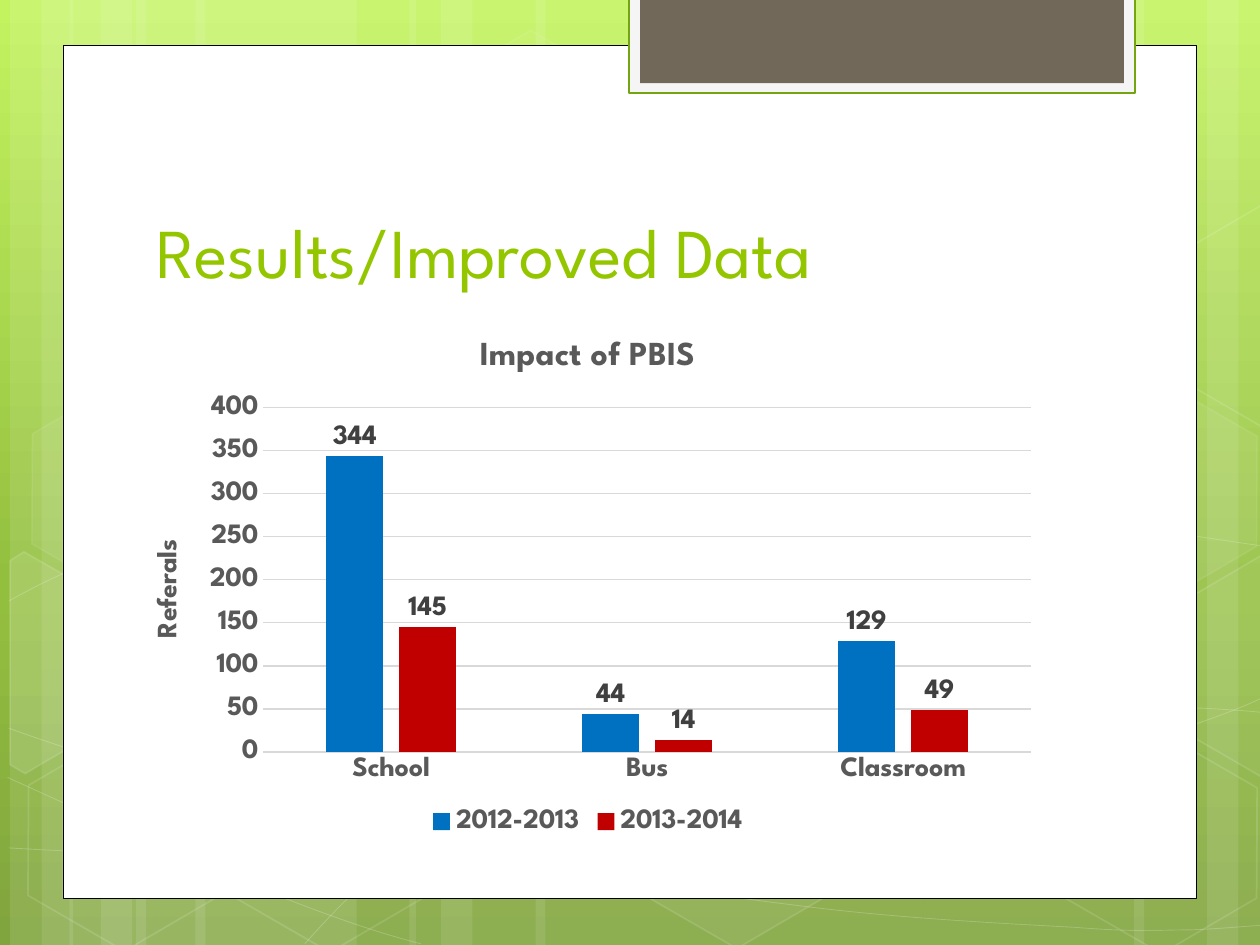
"""Build the slide that charts referrals before and after PBIS."""
from copy import deepcopy
from dataclasses import dataclass
from typing import NamedTuple, Optional

from lxml.etree import SubElement
from pptx import Presentation
from pptx.chart.data import CategoryChartData
from pptx.dml.color import RGBColor
from pptx.enum.chart import XL_CHART_TYPE as ChartType
from pptx.enum.chart import XL_LABEL_POSITION as LabelPosition
from pptx.enum.chart import XL_LEGEND_POSITION as LegendPosition
from pptx.enum.chart import XL_TICK_MARK as TickMark
from pptx.enum.shapes import MSO_SHAPE as Preset
from pptx.enum.text import MSO_ANCHOR as Anchor
from pptx.enum.text import PP_ALIGN as Align
from pptx.oxml.ns import qn
from pptx.slide import Slide
from pptx.util import Pt

PX = 9144
Point = tuple[int, int]


@dataclass(frozen=True)
class Theme:
    font: str = "League Spartan"
    white: str = "FFFFFF"
    black: str = "000000"
    tab_edge: str = "74A510"
    tab_rim: str = "F5F5F5"
    tab: str = "71685A"
    title: str = "94C600"
    axis: str = "595959"
    label: str = "404040"
    grid: str = "D9D9D9"
    sky: tuple = ((0, "C3F35F"), (0.62, "93BF3F"), (1, "81A53E"))
    title_size: float = 40
    chart_title_size: float = 19.2
    chart_size: float = 16


class Paint(NamedTuple):
    color: str
    opacity: int = 100
    width: float = 0


class Box(NamedTuple):
    left: int
    top: int
    width: int
    height: int

    def emu(self) -> list[int]:
        return [side * PX for side in self]


class Hexagon(NamedTuple):
    left: int
    top: int
    fill: int
    line: int


class Shard(NamedTuple):
    points: list[Point]
    fill: int


class Year(NamedTuple):
    name: str
    referrals: tuple[int, ...]
    color: str


THEME = Theme()
BANDS = [(108, 175), (8, 50), (33, 83), (155, 175), (55, 50), (80, 83),
         (733, 175), (958, 50), (900, 83), (425, 308), (325, 50), (350, 83)]
CURVES = [
    [(7, 673), (61, 676), (115, 679), (190, 678), (265, 677), (358, 675), (458, 665),
     (558, 655), (700, 636), (792, 617), (883, 598), (977, 568), (1007, 551)],
    [(7, 477), (36, 461), (65, 446), (121, 431), (178, 416), (259, 394), (347, 387),
     (436, 380), (544, 379), (654, 387), (764, 395), (947, 426), (1007, 434)],
    [(6, 617), (127, 672), (247, 727), (334, 749)],
    [(7, 578), (38, 589), (70, 600), (128, 616), (186, 631), (273, 656), (357, 673),
     (440, 690), (545, 708), (628, 718), (711, 729), (800, 733), (853, 736),
     (905, 740), (919, 738), (945, 738), (971, 737), (989, 735), (1007, 734)],
    [(242, 749), (260, 729), (278, 709), (302, 691), (326, 673), (360, 653), (388, 639),
     (416, 625), (433, 619), (470, 609), (506, 599), (573, 585), (608, 578),
     (644, 571), (649, 571), (680, 569), (711, 566), (760, 563), (794, 562),
     (829, 561), (886, 562), (886, 562), (908, 562), (931, 562), (953, 562),
     (971, 563), (988, 564), (997, 565), (1006, 566), (1003, 565), (1006, 566)],
]
HEXAGONS = [Hexagon(334, 36, 4, 8), Hexagon(497, 589, 6, 12), Hexagon(11, 591, 0, 12),
            Hexagon(14, 312, 7, 8), Hexagon(174, 592, 0, 12), Hexagon(753, 453, 10, 12),
            Hexagon(834, 593, 0, 12), Hexagon(834, 314, 7, 8)]
SHARDS = [
    Shard([(8, 445), (19, 438), (96, 482), (95, 570), (20, 614), (8, 607)], 10),
    Shard([(926, 485), (1001, 441), (1009, 446), (1009, 613), (1002, 617), (926, 573)], 4),
    Shard([(926, 207), (1001, 163), (1010, 168), (1009, 335), (1002, 339), (926, 295)], 0),
]
PLACES = ["School", "Bus", "Classroom"]
YEARS = [Year("2012-2013", (344, 44, 129), "0070C0"),
         Year("2013-2014", (145, 14, 49), "C00000")]


def rgb(color: str) -> RGBColor:
    return RGBColor.from_string(color)


def fade(owner, opacity: int) -> None:
    """Give the solid fill inside owner an alpha value."""
    if opacity < 100:
        SubElement(owner.find(qn("a:solidFill"))[0], qn("a:alpha"), val=str(opacity * 1000))


def paint(shape, fill: Optional[Paint] = None, line: Optional[Paint] = None) -> None:
    """Set the fill and outline of a shape and drop its shadow."""
    shape.shadow.inherit = False
    properties = shape._element.spPr
    if fill and fill.opacity:
        shape.fill.solid()
        shape.fill.fore_color.rgb = rgb(fill.color)
        fade(properties, fill.opacity)
    else:
        shape.fill.background()
    if line:
        shape.line.color.rgb = rgb(line.color)
        shape.line.width = Pt(line.width)
        fade(properties.find(qn("a:ln")), line.opacity)
    else:
        shape.line.fill.background()


def add_panel(slide: Slide, box: Box, fill: Paint, line: Optional[Paint] = None) -> None:
    paint(slide.shapes.add_shape(Preset.RECTANGLE, *box.emu()), fill, line)


def add_outline(slide: Slide, points: list[Point], closed: bool):
    builder = slide.shapes.build_freeform(*points[0], scale=PX)
    builder.add_line_segments(points[1:], close=closed)
    return builder.convert_to_shape()


def add_curve(slide: Slide, knots: list[Point], line: Paint) -> None:
    """Draw a chain of cubic Bézier segments."""
    curve = add_outline(slide, knots, False)
    track = next(curve._element.iter(qn("a:path")))
    legs = track.findall(qn("a:lnTo"))
    for first in range(0, len(legs), 3):
        bend = SubElement(track, qn("a:cubicBezTo"))
        for leg in legs[first:first + 3]:
            bend.append(leg[0])
            track.remove(leg)
    paint(curve, None, line)


def add_sky(slide: Slide) -> None:
    sky = slide.background.fill
    sky.gradient()
    sky.gradient_angle = 270
    first = sky.gradient_stops[0]._gs
    first.addnext(deepcopy(first))
    for stop, (position, color) in zip(sky.gradient_stops, THEME.sky):
        stop.position = position
        stop.color.rgb = rgb(color)


def add_backdrop(slide: Slide) -> None:
    """Draw the decoration and hand it to the slide's layout."""
    white = THEME.white
    add_sky(slide)
    for left, width in BANDS:
        add_panel(slide, Box(left, 0, width, 750), Paint(white, 10))
    for knots in CURVES:
        add_curve(slide, knots, Paint(white, 20, 0.5))
    for cell in HEXAGONS:
        hexagon = slide.shapes.add_shape(Preset.HEXAGON,
                                         *Box(cell.left, cell.top, 175, 152).emu())
        hexagon.adjustments[0] = 0.285
        hexagon.rotation = 30
        paint(hexagon, Paint(white, cell.fill), Paint(white, cell.line, 1))
    for shard in SHARDS:
        paint(add_outline(slide, shard.points, True),
              Paint(white, shard.fill), Paint(white, 12, 1))
    add_panel(slide, Box(50, 36, 900, 677), Paint(white), Paint(THEME.black, width=0.5))
    add_panel(slide, Box(499, -2, 402, 76), Paint(THEME.tab_rim),
              Paint(THEME.tab_edge, width=1.25))
    add_panel(slide, Box(508, -2, 384, 68), Paint(THEME.tab))
    for part in list(slide.shapes):
        if not part.is_placeholder:
            slide.slide_layout.shapes._spTree.append(part._element)


def style_font(font, size: float, color: str, bold: bool = True) -> None:
    font.name, font.size, font.bold = THEME.font, Pt(size), bold
    font.color.rgb = rgb(color)


def place_title(slide: Slide, text: str) -> None:
    title = slide.shapes.title
    title.left, title.top, title.width, title.height = Box(114, 112, 768, 125).emu()
    title.text_frame.text = text
    title.text_frame.vertical_anchor = Anchor.BOTTOM
    heading = title.text_frame.paragraphs[0]
    heading.alignment = Align.LEFT
    style_font(heading.font, THEME.title_size, THEME.title, bold=False)


def caption(title, text: str, size: float) -> None:
    title.text_frame.text = text
    style_font(title.text_frame.paragraphs[0].font, size, THEME.axis)


def rule(line) -> None:
    line.color.rgb = rgb(THEME.grid)
    line.width = Pt(0.75)


def add_referral_chart(slide: Slide) -> None:
    data = CategoryChartData()
    data.categories = PLACES
    for year in YEARS:
        data.add_series(year.name, year.referrals)
    chart = slide.shapes.add_chart(ChartType.COLUMN_CLUSTERED,
                                   *Box(100, 250, 733, 417).emu(), data).chart
    style_font(chart.font, THEME.chart_size, THEME.black)
    caption(chart.chart_title, "Impact of PBIS", THEME.chart_title_size)
    chart.has_legend = True
    chart.legend.position = LegendPosition.BOTTOM
    chart.legend.include_in_layout = False
    style_font(chart.legend.font, THEME.chart_size, THEME.axis)

    places, referrals = chart.category_axis, chart.value_axis
    for axis in (places, referrals):
        axis.major_tick_mark = axis.minor_tick_mark = TickMark.NONE
        style_font(axis.tick_labels.font, THEME.chart_size, THEME.axis)
    rule(places.format.line)
    caption(referrals.axis_title, "Referals", THEME.chart_size)
    referrals.format.line.fill.background()
    rule(referrals.major_gridlines.format.line)

    columns = chart.plots[0]
    columns.gap_width, columns.overlap, columns.vary_by_categories = 219, -27, False
    for series, year in zip(columns.series, YEARS):
        series.format.fill.solid()
        series.format.fill.fore_color.rgb = rgb(year.color)
        series.invert_if_negative = False
        series.data_labels.show_value = True
        series.data_labels.position = LabelPosition.OUTSIDE_END
        style_font(series.data_labels.font, THEME.chart_size, THEME.label)


def main() -> None:
    deck = Presentation()
    deck.slide_width, deck.slide_height = 1000 * PX, 750 * PX
    slide = deck.slides.add_slide(deck.slide_layouts[5])
    add_backdrop(slide)
    place_title(slide, "Results/Improved Data")
    add_referral_chart(slide)
    deck.save("out.pptx")


if __name__ == "__main__":
    main()
